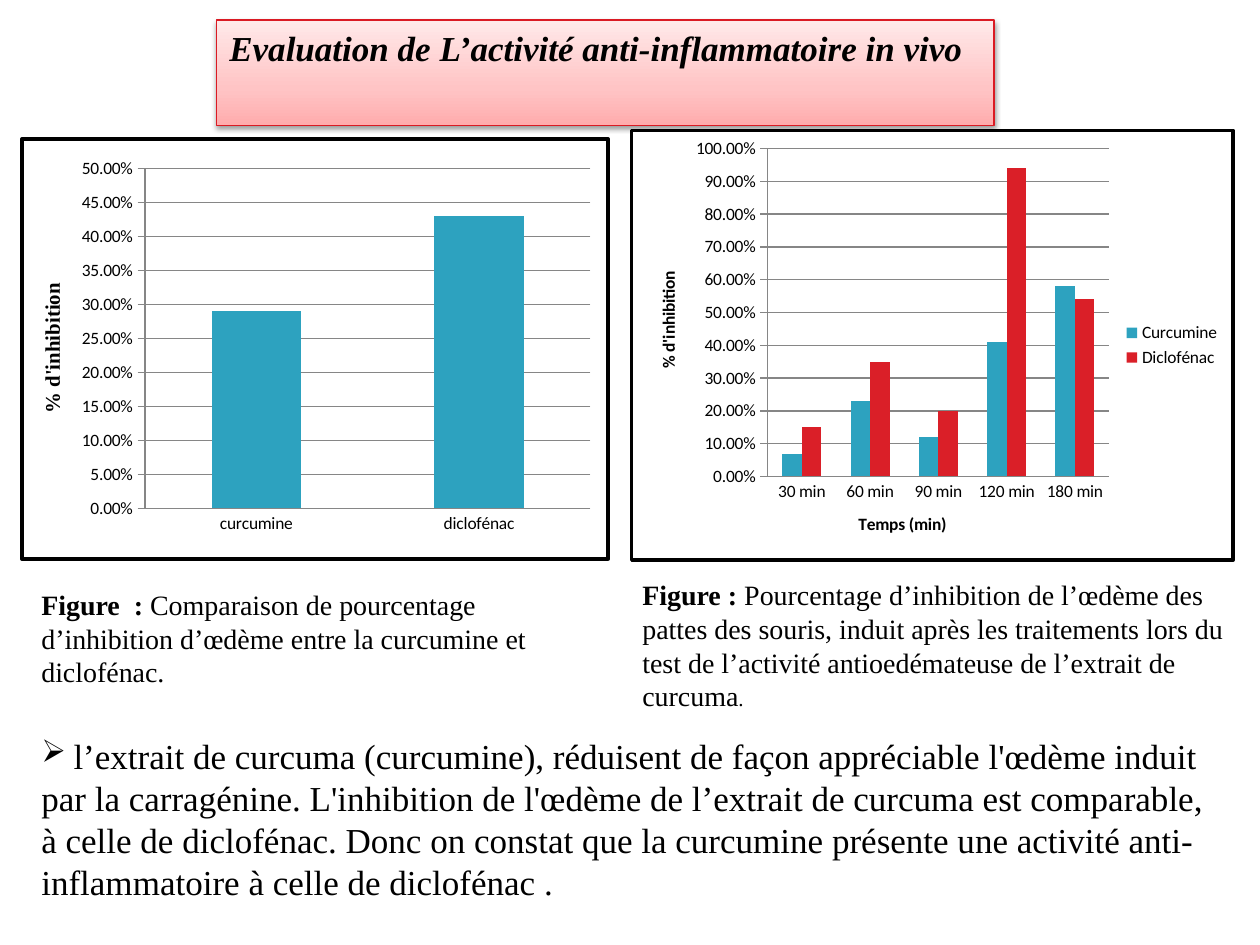
from lxml import etree
from pptx import Presentation
from pptx.chart.data import CategoryChartData
from pptx.dml.color import RGBColor
from pptx.enum.chart import XL_CHART_TYPE as ChartType
from pptx.enum.chart import XL_LEGEND_POSITION as LegendPosition
from pptx.enum.chart import XL_TICK_MARK as TickMark
from pptx.enum.text import MSO_ANCHOR as Anchor
from pptx.enum.text import MSO_AUTO_SIZE as AutoSize
from pptx.enum.text import PP_ALIGN as Align
from pptx.oxml import parse_xml
from pptx.oxml.ns import nsdecls, qn
from pptx.util import Inches, Pt

SERIF, SANS = "Times New Roman", "Calibri"
BLACK, TEAL, RED, GRID = "000000", "2DA2BF", "DA1F28", "868686"


def color(hex_text):
    return RGBColor.from_string(hex_text)


def set_font(font, size, name=SERIF, bold=False, italic=False):
    font.size, font.name, font.bold, font.italic = Pt(size), name, bold, italic
    font.color.rgb = color(BLACK)


def add_span(para, text, **style):
    span = para.add_run()
    span.text = text
    set_font(span.font, **style)


def add_text(page, box, spans, anchor=Anchor.TOP):
    """Add a wrapped text box holding one paragraph of (text, style) spans."""
    frame = page.shapes.add_textbox(*map(Inches, box)).text_frame
    frame.word_wrap = True
    frame.auto_size = AutoSize.SHAPE_TO_FIT_TEXT
    frame.vertical_anchor = anchor
    para = frame.paragraphs[0]
    for text, style in spans:
        add_span(para, text, **style)
    return para


def add_title(page, box):
    title = page.shapes.title
    title.left, title.top, title.width, title.height = map(Inches, box)
    # Gradient, outline and soft shadow
    stops = "".join(
        f'<a:gs pos="{position * 1000}"><a:srgbClr val="{tint}"/></a:gs>'
        for position, tint in ((0, "FFACAD"), (35, "FFC4C5"), (100, "FFE9E9")))
    properties = title.element.spPr
    properties.append(parse_xml(
        f'<a:prstGeom {nsdecls("a")} prst="rect"><a:avLst/></a:prstGeom>'))
    properties.append(parse_xml(
        f'<a:gradFill {nsdecls("a")} rotWithShape="1"><a:gsLst>{stops}</a:gsLst>'
        '<a:lin ang="16200000" scaled="0"/></a:gradFill>'))
    title.line.color.rgb = color("DA1A23")
    title.line.width = Pt(0.75)
    properties.append(parse_xml(
        f'<a:effectLst {nsdecls("a")}><a:outerShdw blurRad="{Pt(3.1)}" '
        f'dist="{Pt(1.6)}" dir="5400000" rotWithShape="0"><a:srgbClr val="{BLACK}">'
        '<a:alpha val="38000"/></a:srgbClr></a:outerShdw></a:effectLst>'))
    # Heading text
    frame = title.text_frame
    frame.word_wrap = True
    frame.auto_size = AutoSize.SHAPE_TO_FIT_TEXT
    frame.vertical_anchor = Anchor.TOP
    para = frame.paragraphs[0]
    para.alignment = Align.LEFT
    add_span(para, "Evaluation de L’activité anti-inflammatoire in vivo",
             size=20, bold=True, italic=True)


def set_axis_title(axis, text, **style):
    para = axis.axis_title.text_frame.paragraphs[0]
    add_span(para, text, bold=True, **style)


def set_plot_area(chart, layout):
    """Fix the inner plot area as fractions of the chart: x, y, w, h."""
    plot_area = chart.element.find(f'.//{qn("c:plotArea")}')
    for old in plot_area.findall(qn("c:layout")):
        plot_area.remove(old)
    element = parse_xml(f'<c:layout {nsdecls("c")}/>')
    manual = etree.SubElement(element, qn("c:manualLayout"))
    settings = [("layoutTarget", "inner"), ("xMode", "edge"), ("yMode", "edge")]
    for tag, value in settings + list(zip("xywh", layout)):
        etree.SubElement(manual, qn(f"c:{tag}")).set("val", str(value))
    plot_area.insert(0, element)


def add_column_chart(page, box, categories, series, top, step):
    """Add a framed column chart; series holds (name, values, colour)."""
    data = CategoryChartData(number_format="0.00%")
    data.categories = categories
    for name, values, _ in series:
        data.add_series(name, values)
    chart = page.shapes.add_chart(
        ChartType.COLUMN_CLUSTERED, *map(Inches, box), data).chart
    chart.has_title = chart.has_legend = False
    set_font(chart.font, 10, SANS)

    # White background and black frame
    chart.element.find(qn("c:chart")).addnext(parse_xml(
        f'<c:spPr {nsdecls("c", "a")}><a:solidFill><a:srgbClr val="FFFFFF"/>'
        f'</a:solidFill><a:ln w="{Pt(2)}"><a:solidFill><a:srgbClr val="{BLACK}"/>'
        '</a:solidFill></a:ln></c:spPr>'))

    # Columns
    plot = chart.plots[0]
    plot.vary_by_categories = False
    plot.gap_width, plot.overlap = 150, 0
    for column, (_, _, shade) in zip(plot.series, series):
        column.format.fill.solid()
        column.format.fill.fore_color.rgb = color(shade)

    # Axes
    value_axis, category_axis = chart.value_axis, chart.category_axis
    value_axis.minimum_scale, value_axis.maximum_scale = 0, top
    value_axis.major_unit = step
    value_axis.tick_labels.number_format = "0.00%"
    value_axis.tick_labels.number_format_is_linked = False
    value_axis.major_tick_mark = TickMark.CROSS
    category_axis.major_tick_mark = TickMark.NONE
    value_axis.has_major_gridlines = True
    for part in (value_axis, category_axis, value_axis.major_gridlines):
        part.format.line.color.rgb = color(GRID)
        part.format.line.width = Pt(0.75)
    return chart


def add_comparison_chart(page, box):
    chart = add_column_chart(page, box, ["curcumine", "diclofénac"],
                             [("Series 1", (0.29, 0.43), TEAL)], 0.5, 0.05)
    set_axis_title(chart.value_axis, "% d'inhibition ", size=12)
    set_plot_area(chart, (0.21, 0.07, 0.76, 0.81))


def add_time_chart(page, box):
    chart = add_column_chart(
        page, box, [f"{minutes} min" for minutes in (30, 60, 90, 120, 180)],
        [("Curcumine", (0.07, 0.23, 0.12, 0.41, 0.58), TEAL),
         ("Diclofénac", (0.15, 0.35, 0.2, 0.94, 0.54), RED)], 1, 0.1)
    set_axis_title(chart.value_axis, "% d'inhibition", size=10, name=SANS)
    set_axis_title(chart.category_axis, "Temps (min)", size=10, name=SANS)
    chart.has_legend = True
    chart.legend.position = LegendPosition.RIGHT
    chart.legend.include_in_layout = False


def add_caption(page, box, label, text, ending=""):
    spans = [(label, dict(size=16, bold=True)), (text, dict(size=16))]
    if ending:
        spans.append((ending, dict(size=12)))
    add_text(page, box, spans, Anchor.MIDDLE)


def add_conclusion(page, box):
    para = add_text(page, box, [
        (" ", dict(size=18, name=SANS)),
        ("l’extrait de curcuma (curcumine), réduisent de façon appréciable "
         "l'œdème induit par la carragénine. L'inhibition de l'œdème de "
         "l’extrait de curcuma est comparable, à celle de diclofénac. Donc on "
         "constat que la curcumine présente une activité anti-inflammatoire à "
         "celle de diclofénac .", dict(size=20))])
    properties = para._p.get_or_add_pPr()
    etree.SubElement(properties, qn("a:buChar")).set("char", "➢")


def main():
    deck = Presentation()
    deck.slide_width, deck.slide_height = Inches(10), Inches(7.5)
    page = deck.slides.add_slide(deck.slide_layouts.get_by_name("Title Only"))
    add_title(page, (1.72, 0.16, 6.17, 0.44))
    add_time_chart(page, (5, 1.02, 4.8, 3.44))
    add_caption(page, (5, 4.53, 5, 1.18), "Figure : ",
                "Pourcentage d’inhibition de l’œdème des pattes des souris, "
                "induit après les traitements lors du test de l’activité "
                "antioedémateuse de l’extrait de curcuma", ".")
    add_comparison_chart(page, (0.16, 1.09, 4.68, 3.36))
    add_caption(page, (0.23, 4.61, 4.53, 0.91), "Figure  : ",
                "Comparaison de pourcentage d’inhibition d’œdème entre la "
                "curcumine et diclofénac.")
    add_conclusion(page, (0.23, 5.78, 9.61, 1.45))
    deck.save("out.pptx")


if __name__ == "__main__":
    main()
